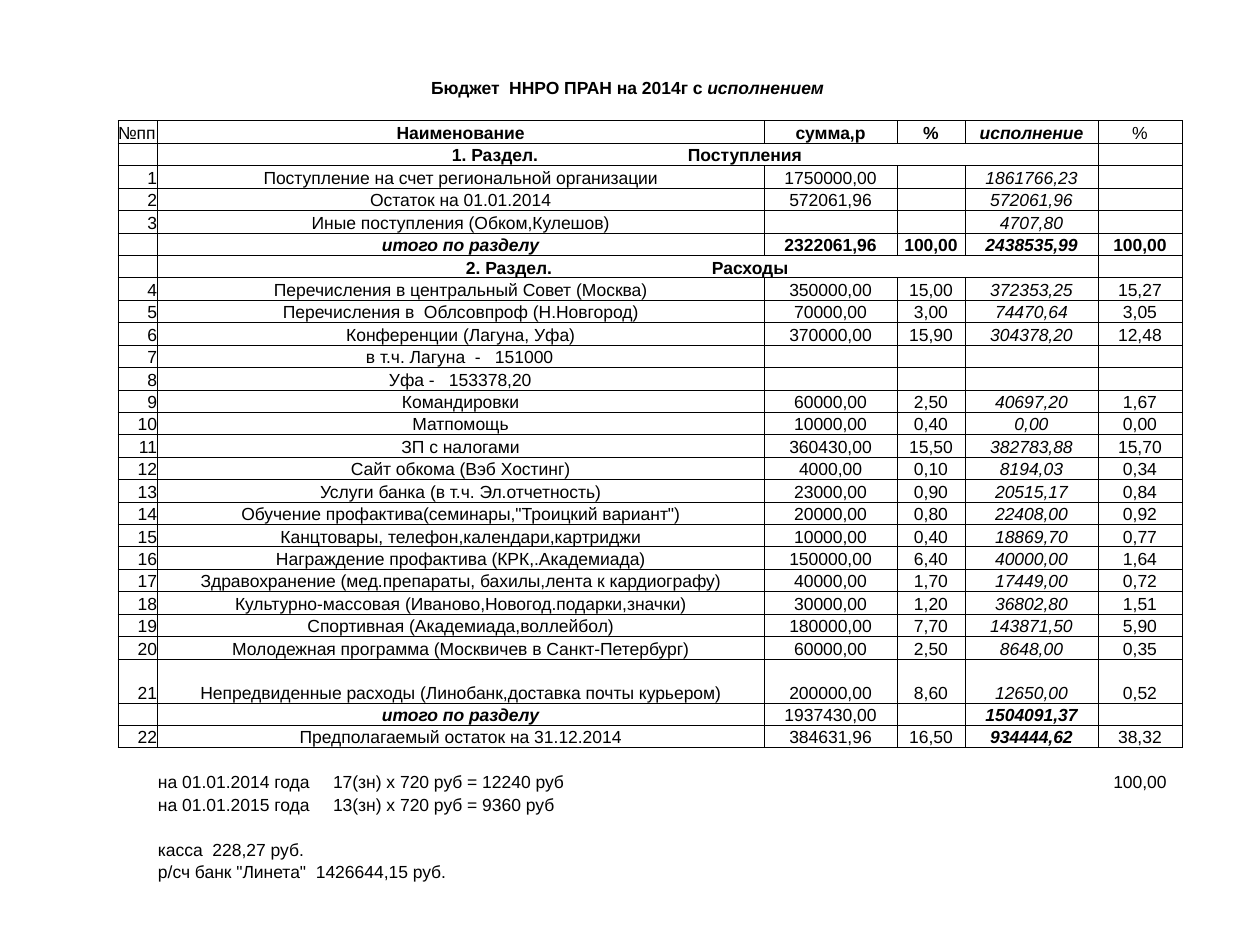
import pptx
import pptx.util
import pptx.dml.color
import pptx.enum.text
from lxml import etree

PX = 914400 // 126
A = "{http://schemas.openxmlformats.org/drawingml/2006/main}"
FONT, SIZE, BLACK = "Arial", 10, "000000"

# Cell styles by column: b = bold, i = italic
PLAIN = ("", "", "", "", "", "")
HEADER = ("", "b", "b", "b", "bi", "")
SECTION = ("", "b", "", "", "", "")
ITEM = ("", "", "", "", "i", "")
INCOME_TOTAL = ("", "bi", "b", "b", "bi", "b")
COST_TOTAL = ("", "bi", "", "", "bi", "")
BALANCE = ("", "", "", "", "bi", "")

EMPTY = (PLAIN, [])
ROWS = [
    EMPTY,
    (PLAIN, ["", ""]),
    EMPTY,
    (HEADER, ["№пп", "Наименование", "сумма,р", "%", "исполнение", "%"]),
    (SECTION, ["", "1. Раздел.\tПоступления"]),
    (ITEM, ["1", "Поступление на счет региональной организации", "1750000,00", "", "1861766,23"]),
    (ITEM, ["2", "Остаток на 01.01.2014", "572061,96", "", "572061,96"]),
    (ITEM, ["3", "Иные поступления (Обком,Кулешов)", "", "", "4707,80"]),
    (INCOME_TOTAL, ["", "итого по разделу", "2322061,96", "100,00", "2438535,99", "100,00"]),
    (SECTION, ["", "2. Раздел.\tРасходы"]),
    (ITEM, ["4", "Перечисления в центральный Совет (Москва)", "350000,00", "15,00", "372353,25", "15,27"]),
    (ITEM, ["5", "Перечисления в  Облсовпроф (Н.Новгород)", "70000,00", "3,00", "74470,64", "3,05"]),
    (ITEM, ["6", "Конференции (Лагуна, Уфа)", "370000,00", "15,90", "304378,20", "12,48"]),
    (ITEM, ["7", "в т.ч. Лагуна  -\t151000"]),
    (ITEM, ["8", "Уфа -\t153378,20"]),
    (ITEM, ["9", "Командировки", "60000,00", "2,50", "40697,20", "1,67"]),
    (ITEM, ["10", "Матпомощь", "10000,00", "0,40", "0,00", "0,00"]),
    (ITEM, ["11", "ЗП с налогами", "360430,00", "15,50", "382783,88", "15,70"]),
    (ITEM, ["12", "Сайт обкома (Вэб Хостинг)", "4000,00", "0,10", "8194,03", "0,34"]),
    (ITEM, ["13", "Услуги банка (в т.ч. Эл.отчетность)", "23000,00", "0,90", "20515,17", "0,84"]),
    (ITEM, ["14", 'Обучение профактива(семинары,"Троицкий вариант")', "20000,00", "0,80", "22408,00", "0,92"]),
    (ITEM, ["15", "Канцтовары, телефон,календари,картриджи", "10000,00", "0,40", "18869,70", "0,77"]),
    (ITEM, ["16", "Награждение профактива (КРК,.Академиада)", "150000,00", "6,40", "40000,00", "1,64"]),
    (ITEM, ["17", "Здравохранение (мед.препараты, бахилы,лента к кардиографу)",
            "40000,00", "1,70", "17449,00", "0,72"]),
    (ITEM, ["18", "Культурно-массовая (Иваново,Новогод.подарки,значки)",
            "30000,00", "1,20", "36802,80", "1,51"]),
    (ITEM, ["19", "Спортивная (Академиада,воллейбол)", "180000,00", "7,70", "143871,50", "5,90"]),
    (ITEM, ["20", "Молодежная программа (Москвичев в Санкт-Петербург)",
            "60000,00", "2,50", "8648,00", "0,35"]),
    (ITEM, ["21", "Непредвиденные расходы (Линобанк,доставка почты курьером)",
            "200000,00", "8,60", "12650,00", "0,52"]),
    (COST_TOTAL, ["", "итого по разделу", "1937430,00", "", "1504091,37"]),
    (BALANCE, ["22", "Предполагаемый остаток на 31.12.2014", "384631,96", "16,50", "934444,62", "38,32"]),
    EMPTY,
    (PLAIN, ["", "на 01.01.2014 года\t17(зн) х 720 руб = 12240 руб", "", "", "", "100,00"]),
    (PLAIN, ["", "на 01.01.2015 года\t13(зн) х 720 руб = 9360 руб"]),
    EMPTY,
    (PLAIN, ["", "касса  228,27 руб."]),
    (PLAIN, ["", 'р/сч банк "Линета"  1426644,15 руб.']),
]
TITLE = [("Бюджет  ННРО ПРАН на 2014г с ", False), ("исполнением", True)]
TITLE_ROW, FIRST, LAST, NOTES = 1, 3, 29, 31
LEFT, TOP = 118, 49
WIDTHS = [39, 607, 133, 68, 133, 84]
GRID_HEIGHT, TALL_ROW, TALL_HEIGHT, TITLE_HEIGHT = 628, 27, 44, 27
ROW_HEIGHT = (GRID_HEIGHT - TALL_HEIGHT) / (LAST - FIRST)
SPANS = {TITLE_ROW: 4, 4: 4, 9: 4, 32: 5}  # row: last merged column
# row: (indent, distance from the indent to the tab stop)
TABBED = {4: (295, 236), 9: (309, 246), 13: (209, 129), 14: (232, 60),
          31: (1, 175), 32: (1, 175)}


def px(value):
    return pptx.util.Emu(round(value * PX))


def colour(value):
    return pptx.dml.color.RGBColor.from_string(value)


def add_borders(cell, row):
    sides = FIRST <= row <= LAST
    drawn = {"lnL": sides, "lnR": sides,
             "lnT": FIRST <= row <= LAST + 1, "lnB": FIRST - 1 <= row <= LAST}
    properties = cell._tc.get_or_add_tcPr()
    for tag, visible in drawn.items():
        line = etree.SubElement(properties, A + tag, w=str(pptx.util.Pt(0.5)))
        if visible:
            fill = etree.SubElement(line, A + "solidFill")
            etree.SubElement(fill, A + "srgbClr", val=BLACK)
        else:
            etree.SubElement(line, A + "noFill")


def add_tab(para, position):
    stops = etree.SubElement(para._p.get_or_add_pPr(), A + "tabLst")
    etree.SubElement(stops, A + "tab", pos=str(px(position)), algn="l")


def alignment(row, column):
    align = pptx.enum.text.PP_ALIGN
    if column == 1 and (row in TABBED or row >= NOTES) or (row, column) == (FIRST, 0):
        return align.LEFT
    return align.RIGHT if column == 0 else align.CENTER


def fill_cell(cell, row, column, text, style):
    add_borders(cell, row)
    cell.fill.background()
    cell.vertical_anchor = pptx.enum.text.MSO_ANCHOR.BOTTOM
    cell.margin_left = cell.margin_right = px(1 if column else 0)
    cell.margin_top, cell.margin_bottom = px(1), 0
    para = cell.text_frame.paragraphs[0]
    para.alignment = alignment(row, column)
    if column == 1 and row in TABBED:
        indent, stop = TABBED[row]
        cell.margin_left = px(indent)
        add_tab(para, stop)
    para.font.name, para.font.size = FONT, pptx.util.Pt(SIZE)
    para.font.color.rgb = colour(BLACK)
    para.font.bold, para.font.italic = "b" in style, "i" in style
    if text:
        para.add_run().text = text
    else:  # keeps an empty line as low as a written one
        etree.SubElement(para._p, A + "endParaRPr", sz=str(SIZE * 100))


deck = pptx.Presentation()
deck.slide_width, deck.slide_height = px(1260), px(945)
page = deck.slides.add_slide(deck.slide_layouts[6])

# Budget table
heights = [ROW_HEIGHT] * len(ROWS)
heights[TITLE_ROW], heights[TALL_ROW] = TITLE_HEIGHT, TALL_HEIGHT
budget = page.shapes.add_table(len(ROWS), len(WIDTHS), px(LEFT), px(TOP),
                               px(sum(WIDTHS)), px(sum(heights))).table
budget.first_row = budget.horz_banding = False
for column, width in enumerate(WIDTHS):
    budget.columns[column].width = px(width)
for row, (styles, texts) in enumerate(ROWS):
    budget.rows[row].height = px(heights[row])
    for column, style in enumerate(styles):
        text = texts[column] if column < len(texts) else ""
        fill_cell(budget.cell(row, column), row, column, text, style)
for row, last in SPANS.items():
    budget.cell(row, 1).merge(budget.cell(row, last))

# Title line in the merged cell
title = budget.cell(TITLE_ROW, 1).text_frame.paragraphs[0]
title.font.bold = True
for text, italic in TITLE:
    span = title.add_run()
    span.text = text
    span.font.italic = italic

deck.save("out.pptx")
